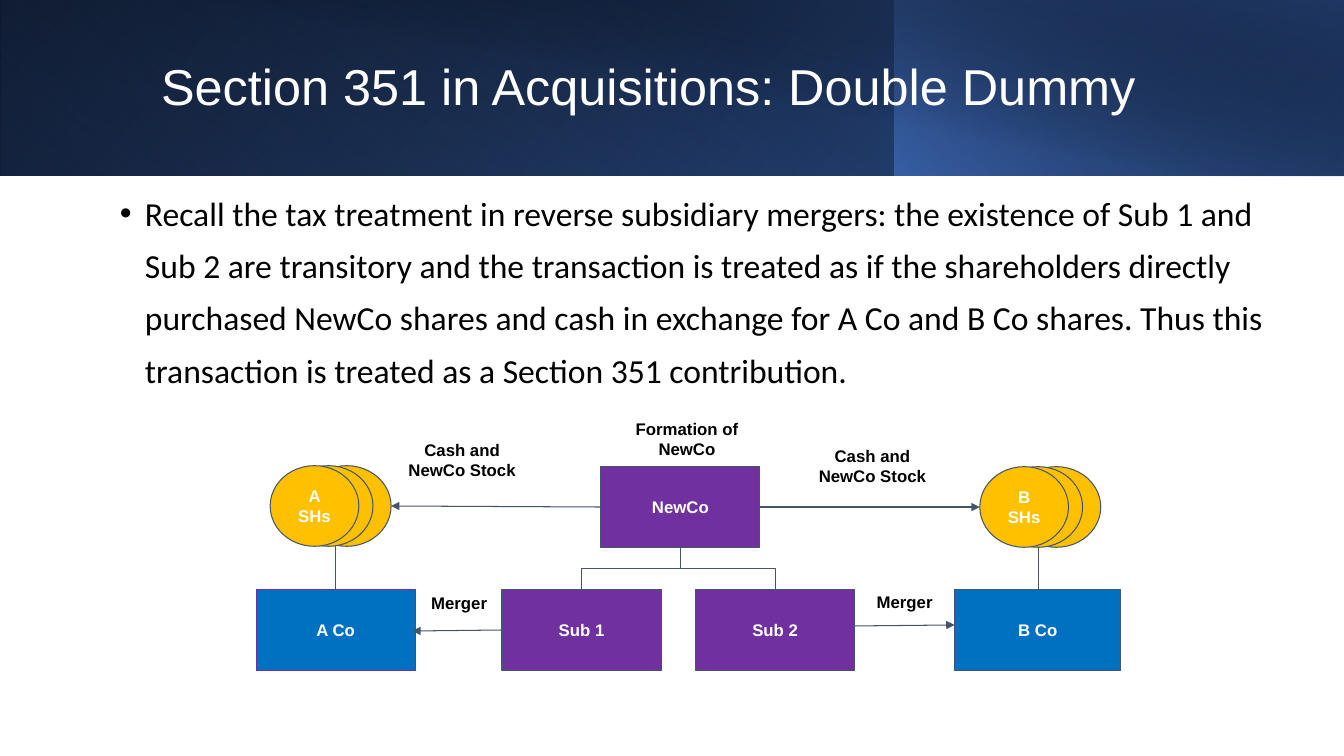
from dataclasses import dataclass

from lxml.etree import SubElement
from pptx import Presentation
from pptx.dml.color import RGBColor
from pptx.enum.shapes import MSO_CONNECTOR, MSO_SHAPE
from pptx.enum.text import MSO_ANCHOR, PP_ALIGN
from pptx.oxml.ns import qn
from pptx.util import Inches, Pt

# Lengths are columns and rows of a grid with ten cells to the inch.
WIDE, HIGH = 133.33, 75
ROW = 8.0  # height of every box and oval
TOP, LOW = 46.3, 58.5  # tops of the two rows of the chart
OVAL = 8.8
STACK = (3.2, 1.4, 0)  # offsets of the ovals, back to front
INK, GOLD, BLUE, PLUM = "44546A", "FFC000", "0070C0", "7030A0"
WHITE, BLACK = "FFFFFF", "000000"


@dataclass
class Stop:
    pos: int
    tone: str
    alpha: int = 100


@dataclass
class Band:
    left: float
    wide: float
    high: float
    angle: int
    stops: tuple[Stop, Stop]
    turn: int = 0
    flip: bool = True


@dataclass
class Box:
    text: str
    left: float
    top: float
    wide: float
    fill: str
    edge: str = INK


@dataclass
class Label:
    text: str
    left: float
    top: float
    wide: float
    high: float


@dataclass
class Link:
    x1: float
    y1: float
    x2: float
    y2: float
    arrow: bool = True


BANDS = [
    Band(0, WIDE, 17.4, 140, (Stop(0, BLACK), Stop(100, "2F5597"))),
    Band(0, 88.8, 17.4, 230,
         (Stop(20, "4472C4", 0), Stop(100, "203864", 55)), turn=180),
    Band(88.7, 44.6, 17.4, 220, (Stop(0, "4472C4", 66), Stop(100, BLACK, 30))),
    Band(5, 128.3, 17.5, 280,
         (Stop(50, BLACK, 0), Stop(99, "203864", 52)), flip=False),
]
BOXES = [
    Box("NewCo", 59.6, TOP, 15.8, PLUM),
    Box("A Co", 25.4, LOW, 15.8, BLUE, PLUM),
    Box("Sub 1", 49.8, LOW, 15.8, PLUM),
    Box("Sub 2", 69, LOW, 15.8, PLUM),
    Box("B Co", 94.7, LOW, 16.5, BLUE),
]
OWNERS = [("A SHs", 26.8, TOP - 0.1), ("B SHs", 97.2, TOP)]
LABELS = [
    Label("Formation of NewCo", 60.9, 40.5, 14.5, 3),
    Label("Merger", 38.3, 57.8, 14.5, 3),
    Label("Merger", 82.5, 57.7, 14.5, 3),
    Label("Cash and NewCo Stock", 39.5, 42.6, 12.7, 6.2),
    Label("Cash and NewCo Stock", 80.2, 43.2, 12.7, 6.2),
]
LINKS = [
    Link(33.3, 54.2, 33.3, LOW, arrow=False),
    Link(103, 54.3, 103, LOW, arrow=False),
    Link(59.6, 50.3, 38.8, 50.2),
    Link(75.4, 50.3, 97.2, 50.3),
    Link(49.8, 62.5, 40.9, 62.6),
    Link(84.8, 62.1, 94.7, 62),
]
SUBS = (57.7, 76.9)  # centres of the boxes held by NewCo
TITLE = "Section 351 in Acquisitions: Double Dummy"
BODY = ("Recall the tax treatment in reverse subsidiary mergers: the existence "
        "of Sub 1 and Sub 2 are transitory and the transaction is treated as if "
        "the shareholders directly purchased NewCo shares and cash in exchange "
        "for A Co and B Co shares. Thus this transaction is treated as a "
        "Section 351 contribution.")

deck = Presentation()
deck.slide_width, deck.slide_height = Inches(WIDE / 10), Inches(HIGH / 10)
slide = deck.slides.add_slide(deck.slide_layouts[6])
shapes = slide.shapes


def grid(*cells: float) -> list[int]:
    return [Inches(cell / 10) for cell in cells]


def paint(code: str) -> RGBColor:
    return RGBColor.from_string(code)


def write(frame, text: str, size: int, tone: str, font="Arial", bold=False):
    """Put one run in the frame and return its paragraph."""
    frame.word_wrap = True
    para = frame.paragraphs[0]
    run = para.add_run()
    run.text = text
    run.font.size, run.font.name, run.font.bold = Pt(size), font, bold
    run.font.color.rgb = paint(tone)
    return para


def tag(frame, text: str, tone: str) -> None:
    """Write small bold centred text with even margins."""
    frame.margin_left = frame.margin_right = Inches(0.1)
    frame.margin_top = frame.margin_bottom = Inches(0.1)
    write(frame, text, 12, tone, bold=True).alignment = PP_ALIGN.CENTER


def add_band(band: Band) -> None:
    shape = shapes.add_shape(MSO_SHAPE.RECTANGLE,
                             *grid(band.left, 0, band.wide, band.high))
    shape.shadow.inherit = False
    shape.line.fill.background()
    shape.rotation = band.turn
    shape.fill.gradient()
    props = shape._element.spPr
    if band.flip:
        props.find(qn("a:xfrm")).set("flipH", "1")
    fade = props.find(qn("a:gradFill"))
    for child in list(fade):
        fade.remove(child)
    stops = SubElement(fade, qn("a:gsLst"))
    for stop in band.stops:
        mark = SubElement(stops, qn("a:gs"), pos=str(stop.pos * 1000))
        tone = SubElement(mark, qn("a:srgbClr"), val=stop.tone)
        SubElement(tone, qn("a:alpha"), val=str(stop.alpha * 1000))
    SubElement(fade, qn("a:lin"), ang=str(band.angle * 60000), scaled="0")


def add_box(box: Box, kind=MSO_SHAPE.RECTANGLE) -> None:
    shape = shapes.add_shape(kind, *grid(box.left, box.top, box.wide, ROW))
    shape.shadow.inherit = False
    shape.fill.solid()
    shape.fill.fore_color.rgb = paint(box.fill)
    shape.line.color.rgb, shape.line.width = paint(box.edge), Pt(0.75)
    if box.text:
        shape.text_frame.vertical_anchor = MSO_ANCHOR.MIDDLE
        tag(shape.text_frame, box.text, WHITE)


def add_link(link: Link, kind=MSO_CONNECTOR.STRAIGHT):
    line = shapes.add_connector(kind, *grid(link.x1, link.y1, link.x2, link.y2))
    line.line.color.rgb, line.line.width = paint(INK), Pt(0.75)
    props = line._element.spPr
    if link.arrow:
        SubElement(props.find(qn("a:ln")), qn("a:tailEnd"), type="triangle")
    SubElement(props, qn("a:effectLst"))
    return line


def add_elbow(x1: float, y1: float, x2: float, y2: float) -> None:
    """Join two points by a bent line that leaves downwards."""
    midx, midy = (x1 + x2) / 2, (y1 + y2) / 2
    halfw, halfh = (y2 - y1) / 2, abs(x2 - x1) / 2
    line = add_link(Link(midx - halfw, midy - halfh, midx + halfw, midy + halfh,
                         arrow=False), MSO_CONNECTOR.ELBOW)
    frame = line._element.spPr.find(qn("a:xfrm"))
    frame.set("rot", str((270 if x2 > x1 else 90) * 60000))
    if x2 > x1:
        frame.set("flipH", "1")


for band in BANDS:
    add_band(band)

title = shapes.add_textbox(*grid(15, 3.2, 108.2, 11.3)).text_frame
title.vertical_anchor = MSO_ANCHOR.MIDDLE
write(title, TITLE, 36, WHITE).line_spacing = 0.9

body = shapes.add_textbox(*grid(10.9, 17.4, 117.4, 22.4)).text_frame
para = write(body, BODY, 24, BLACK, "Calibri")
para.line_spacing, para.space_before = 1.3, Pt(10)
props = para._p.get_or_add_pPr()
props.set("marL", str(Inches(0.25)))
props.set("indent", str(-Inches(0.25)))
SubElement(props, qn("a:buFont"), typeface="Arial")
SubElement(props, qn("a:buChar"), char="•")

for box in BOXES:
    add_box(box)
for name, left, top in OWNERS:
    for step in STACK:
        add_box(Box("" if step else name, left + step, top, OVAL, GOLD),
                MSO_SHAPE.FLOWCHART_CONNECTOR)
for link in LINKS:
    add_link(link)
for sub in SUBS:
    add_elbow(67.5, TOP + ROW, sub, LOW)
for label in LABELS:
    area = shapes.add_textbox(*grid(label.left, label.top, label.wide, label.high))
    tag(area.text_frame, label.text, BLACK)

deck.save("out.pptx")
